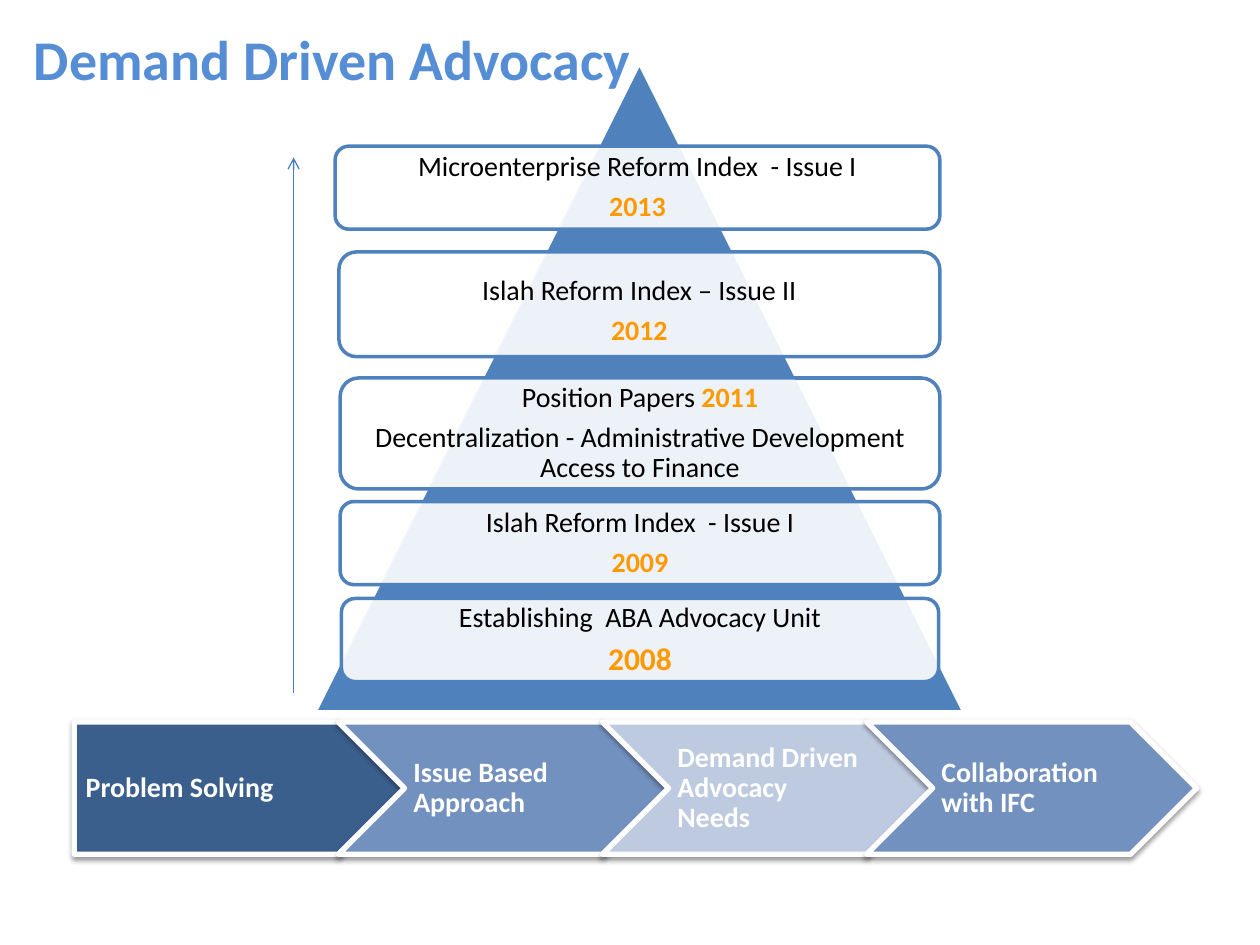
"""Build the Demand Driven Advocacy slide: a pyramid of milestones above a process chain."""
from lxml.etree import SubElement
from pptx import Presentation
from pptx.dml.color import RGBColor
from pptx.enum.shapes import MSO_CONNECTOR as Connector, MSO_SHAPE as Shape
from pptx.enum.text import MSO_ANCHOR as Anchor, PP_ALIGN as Align
from pptx.oxml.ns import qn
from pptx.util import Pt

WHITE = RGBColor(0xFF, 0xFF, 0xFF)
BLACK = RGBColor(0, 0, 0)
BLUE = RGBColor(0x4F, 0x81, 0xBD)
TITLE_BLUE = RGBColor(0x55, 0x8E, 0xD5)
ARROW_BLUE = RGBColor(0x4B, 0x7E, 0xBC)
ORANGE = RGBColor(0xFF, 0x99, 0x00)
DARK_BLUE = RGBColor(0x3A, 0x5F, 0x8C)
MID_BLUE = RGBColor(0x73, 0x91, 0xBF)
PALE_BLUE = RGBColor(0xBE, 0xCA, 0xDF)

TITLE = "Demand Driven Advocacy"
PLAIN = {"name": "Calibri", "size": Pt(16), "bold": False, "color": BLACK}
YEAR = PLAIN | {"bold": True, "color": ORANGE}
BIG_YEAR = YEAR | {"size": Pt(18)}
STEP = PLAIN | {"bold": True, "color": WHITE}
HEADING = STEP | {"size": Pt(32), "color": TITLE_BLUE}

MILESTONES = [
    ((191.5, 83.5, 345.6, 47.5), (2, 2),
     [[("Microenterprise Reform Index  - Issue I", PLAIN)], [("2013", YEAR)]]),
    ((193.7, 144, 343.4, 59.8), (8.6, 0),
     [[("Islah Reform Index – Issue II", PLAIN)], [("2012", YEAR)]]),
    ((194.4, 216, 342.7, 63.4), (2, 2),
     [[("Position Papers ", PLAIN), ("2011", YEAR)],
      [("Decentralization - Administrative Development Access to Finance", PLAIN)]]),
    ((194.4, 286.6, 342.7, 47.5), (2, 2),
     [[("Islah Reform Index  - Issue I", PLAIN)], [("2009", YEAR)]]),
    ((195.1, 342, 341.3, 47.5), (2, 2),
     [[("Establishing  ABA Advocacy Unit", PLAIN)], [("2008", BIG_YEAR)]]),
]
STEPS = [
    ("Problem Solving", Shape.PENTAGON, DARK_BLUE, 6.5),
    ("Issue Based Approach", Shape.CHEVRON, MID_BLUE, 5),
    ("Demand Driven Advocacy Needs", Shape.CHEVRON, PALE_BLUE, 5),
    ("Collaboration with IFC", Shape.CHEVRON, MID_BLUE, 5),
]
STEP_LEFT, STEP_TOP, STEP_WIDTH, STEP_HEIGHT, STEP_PITCH = 42.5, 412.6, 188.6, 75.6, 150.9


def add_figure(slide, kind, bounds, fill, line, weight):
    shape = slide.shapes.add_shape(kind, *map(Pt, bounds))
    shape.shadow.inherit = False
    shape.fill.solid()
    shape.fill.fore_color.rgb = fill
    shape.line.color.rgb = line
    shape.line.width = Pt(weight)
    return shape


def add_run(paragraph, text, style):
    run = paragraph.add_run()
    run.text = text
    for key, value in style.items():
        if key == "color":
            run.font.color.rgb = value
        else:
            setattr(run.font, key, value)


def write(shape, paragraphs, align, margins):
    frame = shape.text_frame
    frame.word_wrap = True
    frame.vertical_anchor = Anchor.MIDDLE
    for side, value in zip(("left", "top", "right", "bottom"), margins):
        setattr(frame, f"margin_{side}", Pt(value))
    for index, runs in enumerate(paragraphs):
        paragraph = frame.add_paragraph() if index else frame.paragraphs[0]
        paragraph.alignment = align
        paragraph.line_spacing = 0.9
        if index:
            paragraph.space_before = Pt(5.6)
        for text, style in runs:
            add_run(paragraph, text, style)


def set_alpha(color, percent):
    SubElement(color, qn("a:alpha"), val=str(percent * 1000))


def add_shadow(shape):
    effects = shape._element.spPr.find(qn("a:effectLst"))
    shadow = SubElement(effects, qn("a:outerShdw"), blurRad=str(Pt(3.1)),
                        dist=str(Pt(1.6)), dir="5400000", rotWithShape="0")
    set_alpha(SubElement(shadow, qn("a:srgbClr"), val=str(BLACK)), 38)


def add_title(slide):
    title = slide.shapes.title
    title.left, title.top, title.width, title.height = map(Pt, (12.2, 5.8, 648, 59.8))
    write(title, [[(TITLE, HEADING)]], Align.LEFT, (7.2, 3.6, 7.2, 3.6))


def add_steps(slide):
    for index, (text, kind, fill, inset) in enumerate(STEPS):
        bounds = (STEP_LEFT + index * STEP_PITCH, STEP_TOP, STEP_WIDTH, STEP_HEIGHT)
        step = add_figure(slide, kind, bounds, fill, WHITE, 3)
        add_shadow(step)
        write(step, [[(text, STEP)]], Align.LEFT, (inset, 3.6, 1.5, 3.6))


def add_pyramid(slide):
    add_figure(slide, Shape.ISOSCELES_TRIANGLE, (180, 36, 370.8, 370.8), BLUE, WHITE, 2)
    for bounds, (top, bottom), paragraphs in MILESTONES:
        box = add_figure(slide, Shape.ROUNDED_RECTANGLE, bounds, WHITE, BLUE, 2)
        set_alpha(box._element.spPr.find(qn("a:solidFill"))[0], 90)
        write(box, paragraphs, Align.CENTER, (5, top, 5, bottom))


def add_arrow(slide):
    arrow = slide.shapes.add_connector(Connector.STRAIGHT, *map(Pt, (167.8, 396, 167.8, 90)))
    arrow.line.color.rgb = ARROW_BLUE
    arrow.line.width = Pt(0.75)
    SubElement(arrow.line._get_or_add_ln(), qn("a:tailEnd"), type="arrow")
    SubElement(arrow._element.spPr, qn("a:effectLst"))


def main():
    presentation = Presentation()
    presentation.slide_width, presentation.slide_height = Pt(720), Pt(540)
    slide = presentation.slides.add_slide(presentation.slide_layouts[5])
    add_steps(slide)
    add_pyramid(slide)
    add_title(slide)
    add_arrow(slide)
    presentation.save("out.pptx")


if __name__ == "__main__":
    main()
